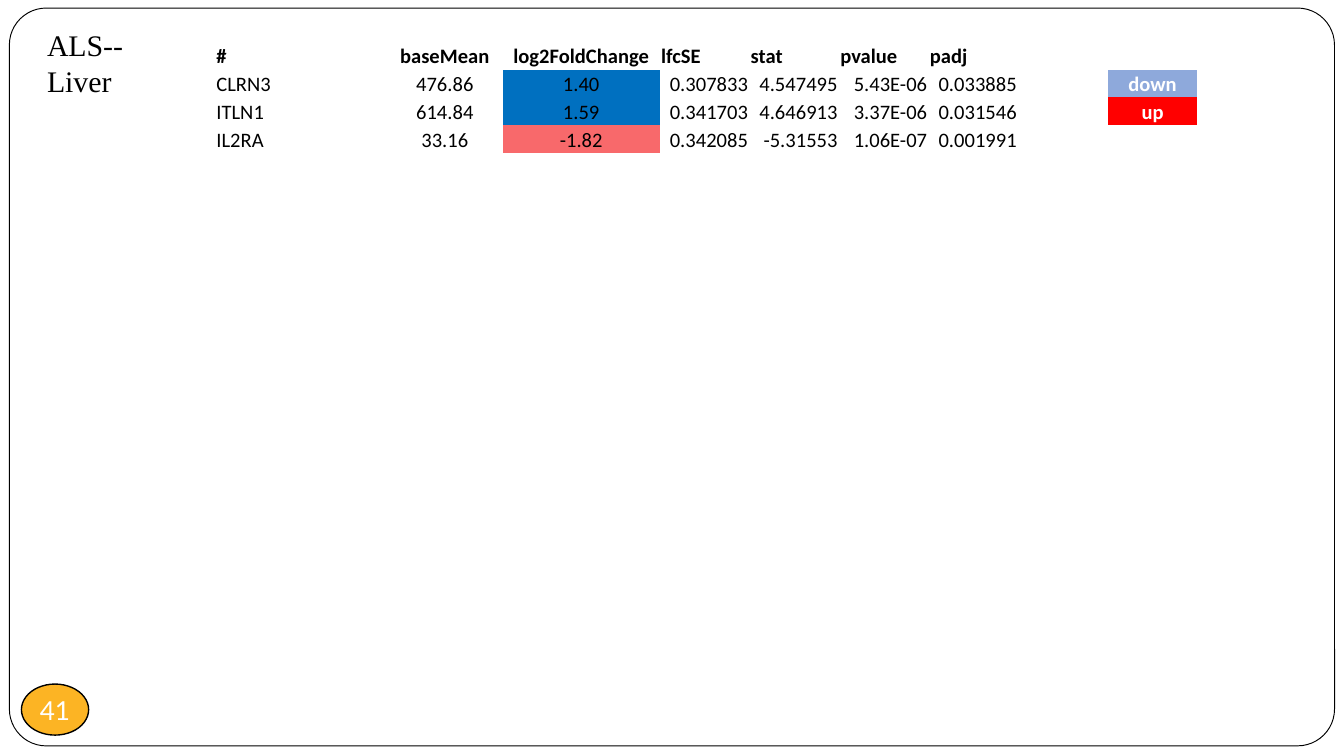
"""Builds the ALS liver gene expression slide."""
import dataclasses

import lxml.etree
import pptx
import pptx.dml.color
import pptx.enum.shapes
import pptx.enum.text
import pptx.oxml.ns
import pptx.util

Inches = pptx.util.Inches
Pt = pptx.util.Pt
ALIGN = pptx.enum.text.PP_ALIGN
ANCHOR = pptx.enum.text.MSO_ANCHOR
SHAPES = pptx.enum.shapes.MSO_SHAPE
NO_GRID = "{2D5ABB26-0587-4C30-8999-92F81FD0307C}"


@dataclasses.dataclass(frozen=True)
class Theme:
    """Colours, fonts and type sizes."""
    black: str = "000000"
    white: str = "FFFFFF"
    badge: str = "FCB424"
    blue: str = "0070C0"
    rose: str = "F8696B"
    down: str = "8EA9DB"
    up: str = "FF0000"
    title_font: str = "Times New Roman"
    table_font: str = "Calibri"
    badge_font: str = "Lato"
    title_size: int = 16
    table_size: int = 11
    badge_size: int = 14


def rgb(value):
    """Return a colour from its hex digits."""
    return pptx.dml.color.RGBColor.from_string(value)


def write(frame, text, *, font, size, color, bold=False, align=ALIGN.LEFT,
          anchor=ANCHOR.TOP, margins=None, wrap=True):
    """Fill a text frame with one formatted paragraph."""
    frame.word_wrap = wrap
    frame.vertical_anchor = anchor
    if margins is not None:
        frame.margin_left, frame.margin_top, frame.margin_right, frame.margin_bottom = map(Inches, margins)
    paragraph = frame.paragraphs[0]
    paragraph.alignment = align
    run = paragraph.add_run()
    run.text = text
    run.font.name, run.font.size, run.font.bold = font, Pt(size), bold
    run.font.color.rgb = rgb(color)


class SlideBuilder:
    """Holds the theme and the current slide."""

    def __init__(self, slide, theme):
        """Keep the slide and theme."""
        self.slide, self.theme = slide, theme

    def shape(self, kind, box, fill, line_width):
        """Add a filled and outlined preset shape."""
        shape = self.slide.shapes.add_shape(kind, *map(Inches, box))
        shape.shadow.inherit = False
        shape.fill.solid()
        shape.fill.fore_color.rgb = rgb(fill)
        shape.line.color.rgb = rgb(self.theme.black)
        shape.line.width = Pt(line_width)
        return shape

    def border(self, box):
        """Add the rounded page border behind the title."""
        border = self.shape(SHAPES.ROUNDED_RECTANGLE, box, self.theme.white, 0.5)
        border.adjustments[0] = 0.05
        self.slide.shapes.title.element.addprevious(border.element)

    def badge(self, number, box):
        """Add the oval page number."""
        badge = self.shape(SHAPES.OVAL, box, self.theme.badge, 0.75)
        write(badge.text_frame, number, font=self.theme.badge_font,
              size=self.theme.badge_size, color=self.theme.white,
              align=ALIGN.CENTER, anchor=ANCHOR.MIDDLE, margins=(0, 0, 0, 0), wrap=False)

    def title(self, text, box):
        """Place and format the title placeholder."""
        title = self.slide.shapes.title
        title.left, title.top, title.width, title.height = map(Inches, box)
        title.text_frame.auto_size = pptx.enum.text.MSO_AUTO_SIZE.SHAPE_TO_FIT_TEXT
        write(title.text_frame, text, font=self.theme.title_font,
              size=self.theme.title_size, color=self.theme.black)

    def table(self, rows, box, widths, fills, legend):
        """Add the results table with its colour legend."""
        graphic = self.slide.shapes.add_table(len(rows), len(widths), *map(Inches, box))
        graphic.element.find(".//" + pptx.oxml.ns.qn("a:tableStyleId")).text = NO_GRID
        results = graphic.table
        results.first_row = results.horz_banding = False
        for column, width in zip(results.columns, widths):
            column.width = Inches(width)
        for r, values in enumerate(rows):
            for c, text in enumerate(values):
                self.cell(results.cell(r, c), text, fills.get((r, c)),
                          header=r == 0, column=c, legend=text in legend)

    def cell(self, cell, text, fill, header, column, legend):
        """Format one table cell."""
        cell.margin_left = cell.margin_top = cell.margin_right = Inches(0.01)
        cell.margin_bottom = 0
        cell.vertical_anchor = ANCHOR.BOTTOM
        if fill:
            cell.fill.solid()
            cell.fill.fore_color.rgb = rgb(fill)
        else:
            cell.fill.background()
        if not text:
            lxml.etree.SubElement(cell.text_frame.paragraphs[0]._p,
                                  pptx.oxml.ns.qn("a:endParaRPr"),
                                  sz=str(self.theme.table_size * 100))
            return
        if legend or column in (1, 2):
            align = ALIGN.CENTER
        else:
            align = ALIGN.LEFT if header or column == 0 else ALIGN.RIGHT
        write(cell.text_frame, text, font=self.theme.table_font,
              size=self.theme.table_size, bold=header or legend, align=align,
              color=self.theme.white if legend else self.theme.black,
              anchor=ANCHOR.BOTTOM)


def main():
    """Build and save the slide."""
    theme = Theme()
    deck = pptx.Presentation()
    deck.slide_width = Inches(10)
    deck.slide_height = deck.slide_width * 9 // 16
    builder = SlideBuilder(deck.slides.add_slide(deck.slide_layouts[5]), theme)
    builder.border((0.07, 0.06, 9.86, 5.49))
    builder.badge("41", (0.16, 5.09, 0.5, 0.38))
    builder.title("ALS--Liver", (0.25, 0.15, 1.1, 0.37))
    genes = [
        ("#", "baseMean", "log2FoldChange", "lfcSE", "stat", "pvalue", "padj", "", ""),
        ("CLRN3", "476.86", "1.40", "0.307833", "4.547495", "5.43E-06", "0.033885", "", "down"),
        ("ITLN1", "614.84", "1.59", "0.341703", "4.646913", "3.37E-06", "0.031546", "", "up"),
        ("IL2RA", "33.16", "-1.82", "0.342085", "-5.31553", "1.06E-07", "0.001991", "", ""),
    ]
    fills = {(1, 2): theme.blue, (2, 2): theme.blue, (3, 2): theme.rose,
             (1, 8): theme.down, (2, 8): theme.up}
    builder.table(genes, (1.6, 0.31, 7.31, 0.83), [1.28, 0.86, 1.17] + [4 / 6] * 6,
                  fills, legend=("down", "up"))
    deck.save("out.pptx")


if __name__ == "__main__":
    main()
